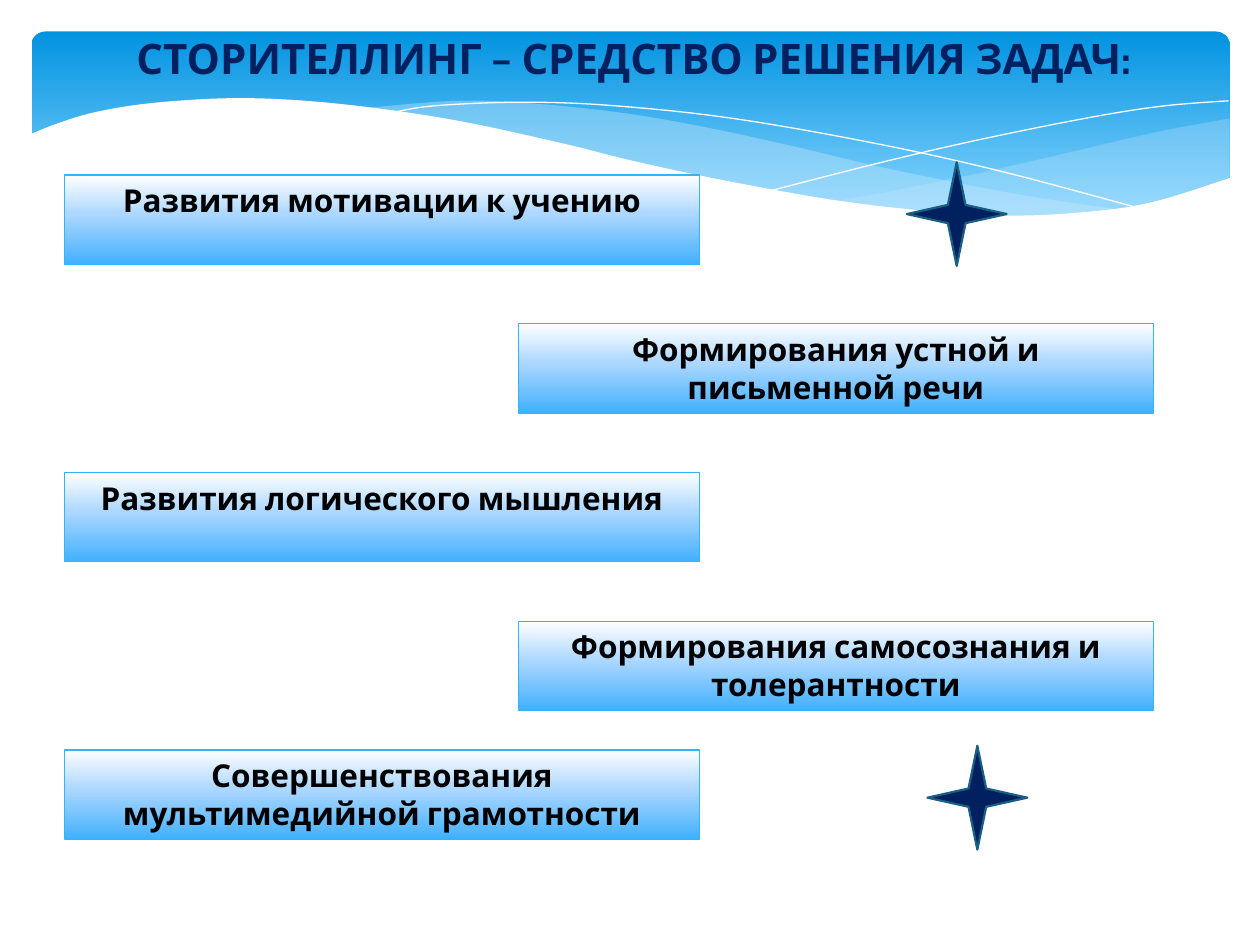
from lxml import etree
from pptx import Presentation
from pptx.dml.color import RGBColor
from pptx.enum.shapes import MSO_SHAPE
from pptx.enum.text import MSO_ANCHOR, PP_ALIGN
from pptx.oxml.ns import qn
from pptx.util import Pt

RECTANGLE = MSO_SHAPE.RECTANGLE
ROUNDED = MSO_SHAPE.ROUNDED_RECTANGLE
STAR = MSO_SHAPE.STAR_4_POINT
CENTER = PP_ALIGN.CENTER
TOP = MSO_ANCHOR.TOP

THEME = {
    "font": "Cabin",
    "title_size": 24,
    "task_size": 18,
    "navy": "002060",
    "text": "000000",
    "white": "FFFFFF",
    "veil": "C6E7FC",
    "task_line": "31B6FD",
    "star_line": "195F84",
    "banner": [(0, "0293E0"), (90, "83D3FE")],
    "task": [(0, "FFFFFF"), (44, "ACD7FF"), (100, "42B0FD")],
}

TITLE = "СТОРИТЕЛЛИНГ – СРЕДСТВО РЕШЕНИЯ ЗАДАЧ:"
TASKS = [
    "Развития мотивации к учению",
    "Формирования устной и письменной речи",
    "Развития логического мышления",
    "Формирования самосознания и толерантности",
    "Совершенствования мультимедийной грамотности",
]
TASK_LEFTS = (36.8, 296.2)
TASK_SIZE = (363, 51)
TASK_TOP, TASK_PITCH, LAST_TASK_TOP = 100, 85, 428.5
STARS = [(518.2, 92.7), (530, 426.2)]
STAR_SIZE = (57, 59.3)

FRONT_VEIL = [
    [(702.7, 67.7), (663, 75), (620, 85), (561, 98.6), (508.3, 109.4), (476, 115.2)],
    [(476, 115.2), (507.6, 118.8), (545, 122.4), (586, 123.8), (621.4, 122.4),
     (651.6, 117.4), (678.2, 110.9), (702.7, 101.5)],
]
BACK_VEIL = [
    [(643, 120.2), (581, 110.9), (508.3, 96.5), (453, 83.5), (399.6, 72),
     (352, 64), (302.4, 59), (260, 57.6), (206, 62)],
    [(206, 62), (246.2, 67.7), (291, 76.3), (353.5, 90.7), (407.5, 103),
     (468, 113.8), (519.8, 121), (565.2, 123.8), (596.2, 124.5), (643, 120.2)],
]
FALLING_LINE = [
    [(222.5, 64.8), (247.7, 60.5), (299.5, 58.4), (352, 60.5), (419, 67.7),
     (500.4, 82), (572.4, 98), (653, 119.5)],
]
RISING_LINE = [
    [(441.4, 108.7), (500.4, 93.6), (558.7, 80), (623.5, 67), (665.3, 60.5), (702, 57.6)],
]
WHITE_WAVE = [
    [(703.4, 101.5), (662.4, 114.5), (630, 120.2), (582.5, 123.2), (535.7, 121),
     (481, 115), (417, 103.7), (362, 92), (321.8, 82), (262.8, 69.2), (210.2, 61.2),
     (165.6, 57), (127.4, 56.2), (85.7, 59), (54.7, 64), (33, 70.5), (16.6, 77)],
    [(16.6, 161.2), (703.4, 161.2)],
]


def color(name):
    return RGBColor.from_string(THEME[name])


def smooth(points, steps=6):
    padded = [points[0], *points, points[-1]]
    curve = [points[0]]
    for a, b, c, d in zip(padded, padded[1:], padded[2:], padded[3:]):
        for step in range(1, steps + 1):
            t = step / steps
            curve.append(tuple(
                q + t * (r - p) / 2 + t * t * (p - 2.5 * q + 2 * r - s / 2)
                + t ** 3 * (1.5 * (q - r) + (s - p) / 2)
                for p, q, r, s in zip(a, b, c, d)
            ))
    return curve


def fill_gradient(shape, stops):
    shape.fill.gradient()
    shape.fill.gradient_angle = 270
    stop_list = shape._element.spPr.find(qn("a:gradFill")).find(qn("a:gsLst"))
    for stop in list(stop_list):
        stop_list.remove(stop)
    for position, value in stops:
        stop = etree.SubElement(stop_list, qn("a:gs"), pos=str(position * 1000))
        etree.SubElement(stop, qn("a:srgbClr"), val=value)


def add_shape(slide, kind, left, top, width, height):
    shape = slide.shapes.add_shape(kind, Pt(left), Pt(top), Pt(width), Pt(height))
    shape.shadow.inherit = False
    return shape


def add_curve(slide, edges, fill=None, opacity=100):
    points = [(Pt(x), Pt(y)) for edge in edges for x, y in smooth(edge)]
    builder = slide.shapes.build_freeform(*points[0])
    builder.add_line_segments(points[1:], close=fill is not None)
    shape = builder.convert_to_shape()
    shape.shadow.inherit = False
    if fill is None:
        shape.fill.background()
        shape.line.color.rgb = color("white")
        shape.line.width = Pt(0)
        return
    shape.line.fill.background()
    shape.fill.solid()
    shape.fill.fore_color.rgb = color(fill)
    if opacity < 100:
        value = next(shape._element.spPr.iter(qn("a:srgbClr")))
        etree.SubElement(value, qn("a:alpha"), val=str(opacity * 1000))


def write(shape, text, size, color_name):
    frame = shape.text_frame
    frame.word_wrap = True
    frame.vertical_anchor = TOP
    paragraph = frame.paragraphs[0]
    paragraph.alignment = CENTER
    run = paragraph.add_run()
    run.text = text
    run.font.name = THEME["font"]
    run.font.size = Pt(THEME[size])
    run.font.bold = True
    run.font.color.rgb = color(color_name)


def add_banner(slide):
    banner = add_shape(slide, ROUNDED, 18, 18, 684.7, 112.3)
    banner.adjustments[0] = 0.07
    fill_gradient(banner, THEME["banner"])
    banner.line.fill.background()
    add_curve(slide, FRONT_VEIL, "veil", 29)
    add_curve(slide, BACK_VEIL, "veil", 40)
    add_curve(slide, FALLING_LINE)
    add_curve(slide, RISING_LINE)
    add_curve(slide, WHITE_WAVE, "white")


def add_title(slide):
    title = slide.shapes.title
    title.left, title.top, title.width, title.height = Pt(53.3), Pt(15), Pt(617.8), Pt(65.5)
    write(title, TITLE, "title_size", "navy")
    slide.shapes._spTree.append(title._element)


def add_tasks(slide):
    tops = [TASK_TOP + TASK_PITCH * row for row in range(len(TASKS) - 1)] + [LAST_TASK_TOP]
    for row, (text, top) in enumerate(zip(TASKS, tops)):
        box = add_shape(slide, RECTANGLE, TASK_LEFTS[row % 2], top, *TASK_SIZE)
        fill_gradient(box, THEME["task"])
        box.line.color.rgb = color("task_line")
        box.line.width = Pt(0.75)
        write(box, text, "task_size", "text")


def add_stars(slide):
    for left, top in STARS:
        star = add_shape(slide, STAR, left, top, *STAR_SIZE)
        star.fill.solid()
        star.fill.fore_color.rgb = color("navy")
        star.line.color.rgb = color("star_line")
        star.line.width = Pt(1.25)


def main():
    presentation = Presentation()
    presentation.slide_width, presentation.slide_height = Pt(720), Pt(540)
    slide = presentation.slides.add_slide(presentation.slide_layouts[5])
    add_banner(slide)
    add_title(slide)
    add_tasks(slide)
    add_stars(slide)
    presentation.save("out.pptx")


if __name__ == "__main__":
    main()
